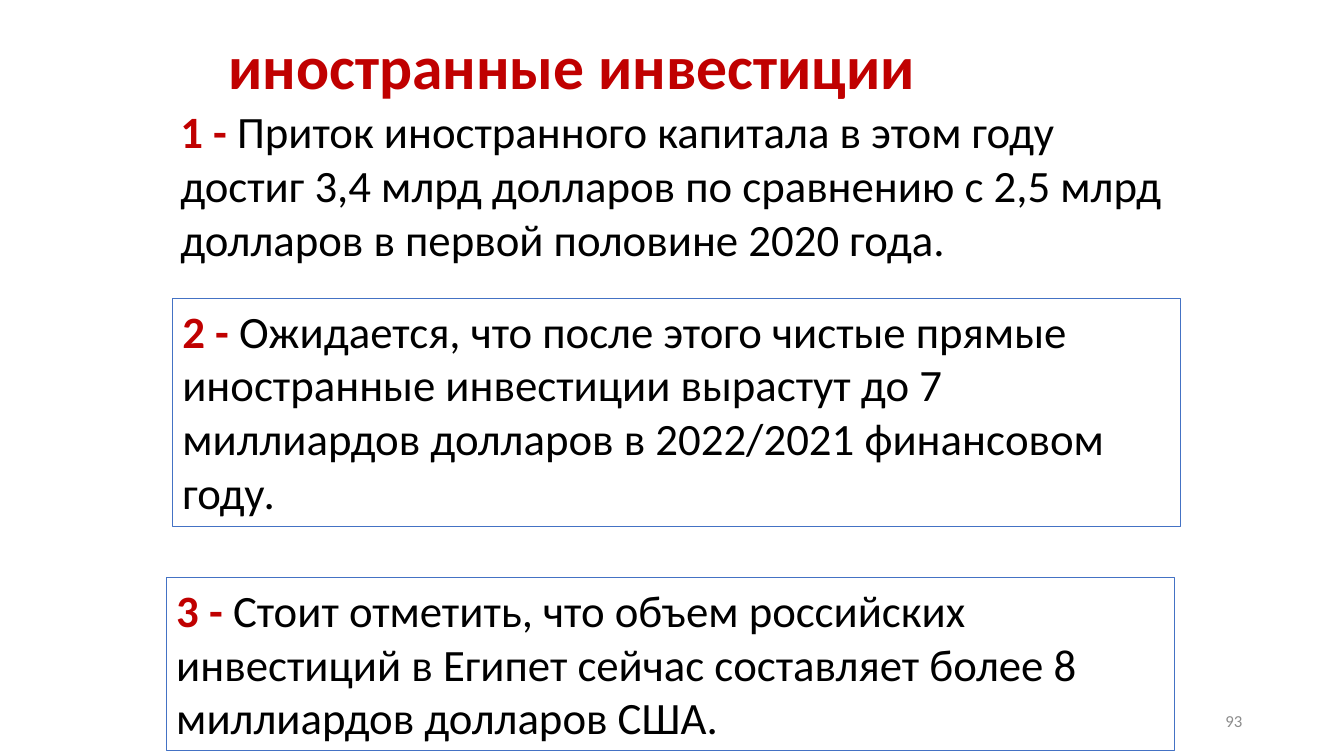
from pptx import Presentation
from pptx.dml.color import RGBColor
from pptx.enum.shapes import MSO_SHAPE
from pptx.enum.text import MSO_ANCHOR, MSO_AUTO_SIZE, PP_ALIGN
from pptx.util import Inches, Pt

RECT = MSO_SHAPE.RECTANGLE
TOP, MIDDLE = MSO_ANCHOR.TOP, MSO_ANCHOR.MIDDLE
LEFT, RIGHT = PP_ALIGN.LEFT, PP_ALIGN.RIGHT
GROW = MSO_AUTO_SIZE.SHAPE_TO_FIT_TEXT

FONT = "Calibri"
COLORS = {"red": "C00000", "black": "000000", "blue": "4472C4", "gray": "8C8C8C"}

# left, top, height, framed, text
POINTS = [
    (1.69, 0.98, 1.72, False,
     "Приток иностранного капитала в этом году достиг 3,4 млрд долларов "
     "по сравнению с 2,5 млрд долларов в первой половине 2020 года."),
    (1.71, 2.96, 2.26, True,
     "Ожидается, что после этого чистые прямые иностранные инвестиции вырастут "
     "до 7 миллиардов долларов в 2022/2021 финансовом году."),
    (1.65, 5.73, 1.72, True,
     "Стоит отметить, что объем российских инвестиций в Египет сейчас "
     "составляет более 8 миллиардов долларов США."),
]


def rgb(name):
    return RGBColor.from_string(COLORS[name])


def style_run(r, size, color, bold=False):
    r.font.name = FONT
    r.font.size = Pt(size)
    r.font.bold = bold
    r.font.color.rgb = rgb(color)


def add_label(s, box, text, size, color, bold=False, align=LEFT, spacing=1.0):
    """Add a one-line, vertically centred text box."""
    sp = s.shapes.add_textbox(*map(Inches, box))
    tf = sp.text_frame
    tf.word_wrap = True
    tf.vertical_anchor = MIDDLE
    p = tf.paragraphs[0]
    p.text = text
    p.alignment = align
    p.line_spacing = spacing
    style_run(p.runs[0], size, color, bold)


def add_point(s, number, left, top, height, framed, text):
    """Add a numbered statement, with a thin frame if asked for."""
    box = [Inches(v) for v in (left, top, 10, height)]
    if framed:
        sp = s.shapes.add_shape(RECT, *box)
        sp.shadow.inherit = False
        sp.fill.background()
        sp.line.color.rgb = rgb("blue")
        sp.line.width = Pt(0.75)
    else:
        sp = s.shapes.add_textbox(*box)
    tf = sp.text_frame
    tf.word_wrap = True
    tf.auto_size = GROW
    tf.vertical_anchor = TOP
    p = tf.paragraphs[0]
    p.text = f"{number} - "
    p.alignment = LEFT
    style_run(p.runs[0], 32, "red", bold=True)
    r = p.add_run()
    r.text = text
    style_run(r, 32, "black")


def main():
    prs = Presentation()
    prs.slide_width, prs.slide_height = Inches(13.33), Inches(7.5)
    s = prs.slides.add_slide(prs.slide_layouts[6])
    add_label(s, (2.17, 0.06, 9, 1.25), "иностранные инвестиции", 44, "red",
              bold=True, spacing=0.9)
    add_label(s, (9.42, 6.95, 3, 0.4), "93", 12, "gray", align=RIGHT)
    for number, point in enumerate(POINTS, start=1):
        add_point(s, number, *point)
    prs.save("out.pptx")


if __name__ == "__main__":
    main()
